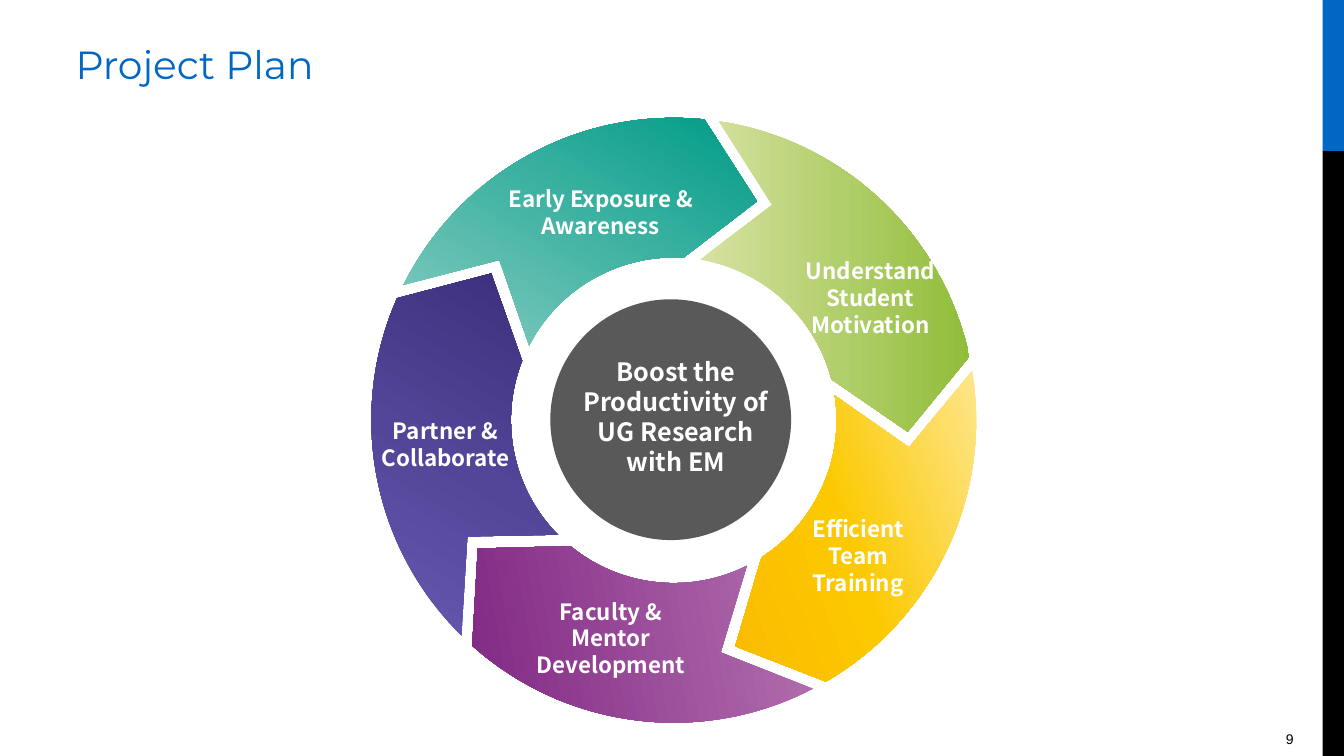
from copy import deepcopy
from math import cos, radians, sin

from pptx import Presentation
from pptx.dml.color import RGBColor
from pptx.enum.shapes import MSO_SHAPE
from pptx.enum.text import MSO_ANCHOR, PP_ALIGN
from pptx.util import Pt

RECTANGLE, OVAL = MSO_SHAPE.RECTANGLE, MSO_SHAPE.OVAL
LEFT, CENTER, RIGHT = PP_ALIGN.LEFT, PP_ALIGN.CENTER, PP_ALIGN.RIGHT
MIDDLE = MSO_ANCHOR.MIDDLE

CENTER_X, CENTER_Y = 481.3, 300.2
OUTER, INNER, TIP, NOTCH = 216, 116.3, 167.3, 169.2
STEP = 72


def color(hex_code):
    return RGBColor.from_string(hex_code)


def write(box, text, size, font, hex_code, align, bold=False):
    frame = box.text_frame
    frame.word_wrap = True
    frame.text = text
    paragraph = frame.paragraphs[0]
    paragraph.alignment = align
    run_font = paragraph.runs[0].font
    run_font.size = Pt(size)
    run_font.name = font
    run_font.bold = bold
    run_font.color.rgb = color(hex_code)


prs = Presentation()
prs.slide_width, prs.slide_height = Pt(960), Pt(540)
slide = prs.slides.add_slide(prs.slide_layouts[5])
shapes = slide.shapes

title = shapes.title
title.left, title.top, title.width, title.height = Pt(46.8), Pt(23.8), Pt(769), Pt(43.2)
write(title, "Project Plan", 28, "Montserrat", "0067C5", LEFT)
title.text_frame.vertical_anchor = MIDDLE

solids = [
    (RECTANGLE, 944.8, 0, 15.2, 108, "0067C5"),
    (RECTANGLE, 944.8, 108, 15.2, 432, "000000"),
    (OVAL, 393.1, 213.8, 172, 172, "595959"),
]
for kind, left, top, width, height, fill in solids:
    solid = shapes.add_shape(kind, Pt(left), Pt(top), Pt(width), Pt(height))
    solid.shadow.inherit = False
    solid.fill.solid()
    solid.fill.fore_color.rgb = color(fill)
    solid.line.fill.background()

page_number = shapes.add_textbox(Pt(768), Pt(518.4), Pt(192), Pt(21.6))
page_number.text_frame.margin_right = Pt(36)
write(page_number, "9", 10, "Arial", "000000", RIGHT)

stages = [
    ("Early Exposure & Awareness", (347.8, 128.9, 162.7, 46),
     300, [(0, "86CCC1"), (0.54, "3EB2A2"), (1, "009C87")]),
    ("Understand Student Motivation", (553, 180, 137.5, 65.5),
     0, [(0, "D7E2A3"), (0.54, "B0CE69"), (1, "90BD39")]),
    ("Efficient Team Training", (565.2, 364.3, 95.8, 65.5),
     160, [(0, "FDE68D"), (0.54, "FCC900"), (1, "FBBB01")]),
    ("Faculty & Mentor Development", (362.9, 423.4, 146.9, 65.5),
     170, [(0, "B370AE"), (1, "822985")]),
    ("Partner & Collaborate", (249.1, 294.5, 138.2, 46),
     300, [(0, "6759B1"), (0.47, "534597"), (1, "3A2E7A")]),
]

ARC_STEPS = 40
outer_arc = [(OUTER, 8.6 + 69.2 * i / ARC_STEPS) for i in range(ARC_STEPS + 1)]
inner_arc = [(INNER, 75.4 - 66.1 * i / ARC_STEPS) for i in range(ARC_STEPS + 1)]
arrow_outline = outer_arc + [(TIP, 92.8)] + inner_arc + [(NOTCH, 24.6)]

for index, (label, _, angle, stops) in enumerate(stages):
    turn = STEP * (index - 1)
    points = [
        (Pt(CENTER_X + radius * sin(radians(degrees + turn))),
         Pt(CENTER_Y - radius * cos(radians(degrees + turn))))
        for radius, degrees in arrow_outline
    ]
    builder = shapes.build_freeform(*points[0])
    builder.add_line_segments(points[1:], close=True)
    arrow = builder.convert_to_shape()
    arrow.shadow.inherit = False
    arrow.line.fill.background()
    arrow.fill.gradient()
    arrow.fill.gradient_angle = (360 - angle) % 360
    stop_list = arrow.fill._fill._gradFill.gsLst
    if len(stops) == 3:
        stop_list.append(deepcopy(stop_list[0]))
    for stop, (position, hex_code) in zip(arrow.fill.gradient_stops, stops):
        stop.position = position
        stop.color.rgb = color(hex_code)

labels = [(label, box, 16) for label, box, _, _ in stages]
labels.append(("Boost the Productivity of UG Research with EM", (403.2, 250.6, 159.1, 94.3), 18))
for label, box, size in labels:
    caption = shapes.add_textbox(*[Pt(length) for length in box])
    write(caption, label, size, "Noto Sans CJK SC", "FFFFFF", CENTER, bold=True)

prs.save("out.pptx")
